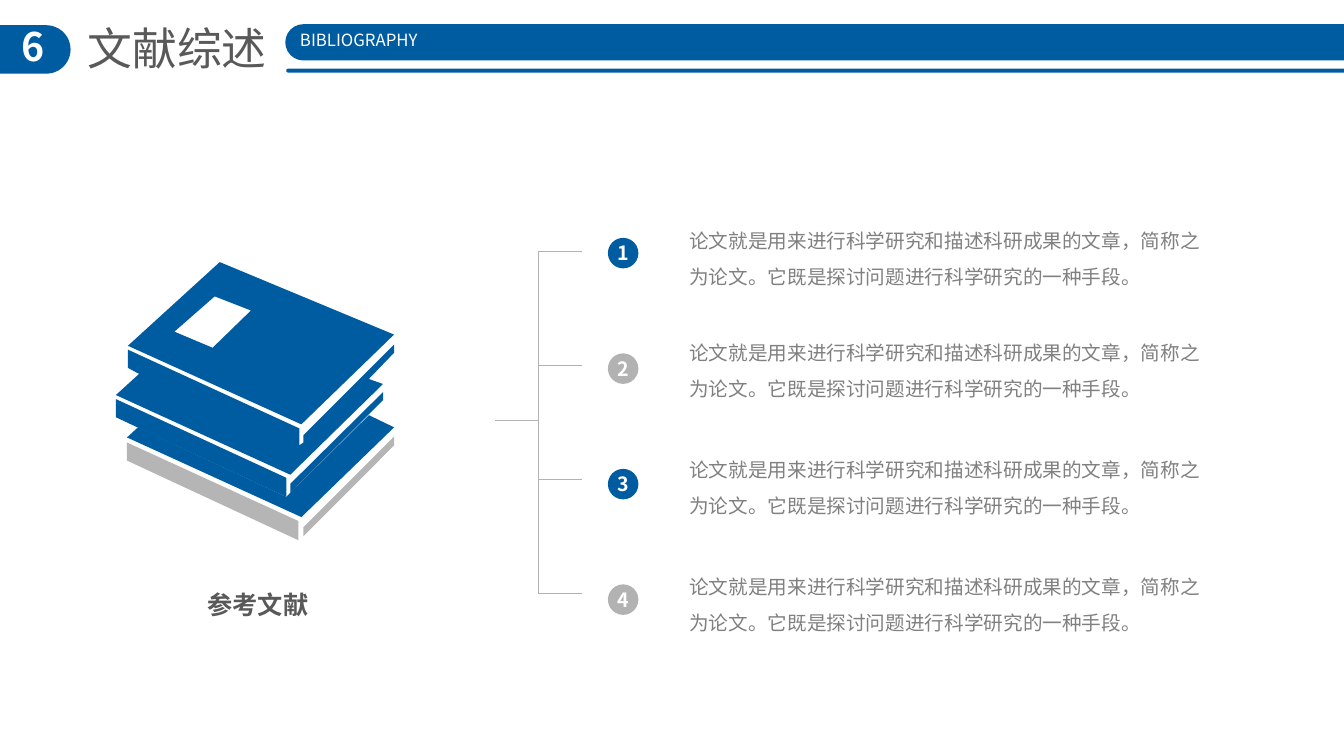
"""Build the bibliography slide with a stack of books and four numbered notes."""
import lxml.etree
import pptx
import pptx.dml.color
import pptx.enum.shapes
import pptx.enum.text
import pptx.oxml.ns
import pptx.util

Pt = pptx.util.Pt
SHAPES = pptx.enum.shapes.MSO_SHAPE
ALIGN = pptx.enum.text.PP_ALIGN

SECTION_NUMBER = "6"
TITLE = "文献综述"
SUBTITLE = "BIBLIOGRAPHY"
CAPTION = "参考文献"
NOTE = "论文就是用来进行科学研究和描述科研成果的文章，简称之为论文。它既是探讨问题进行科学研究的一种手段。"
NOTES = [
    {"number": "1", "color": "blue", "text": NOTE, "top": 151.9},
    {"number": "2", "color": "silver", "text": NOTE, "top": 231.8},
    {"number": "3", "color": "blue", "text": NOTE, "top": 315.4},
    {"number": "4", "color": "silver", "text": NOTE, "top": 398.9},
]

THEME = {
    "font": "Noto Sans CJK SC",
    "colors": {"blue": "005CA1", "silver": "B2B2B2", "page_edge": "B5B5B6",
               "white": "FFFFFF", "dark": "595959", "body": "808080"},
    "sizes": {"title": 32, "section": 28, "caption": 18, "note": 14, "subtitle": 12},
    "rule": 0.5,
}

HEADER_BARS = [(-20.2, 18, 70.6, 34.6), (203.8, 17.3, 794.2, 25.9), (204.5, 49, 794.2, 2.9)]

BOOK_PARTS = [
    ("page_edge", [[(90.7, 329), (213.1, 385.9), (213.1, 372.2), (90.7, 316.1)]]),
    ("page_edge", [[(216.7, 383), (281.5, 318.2), (281.5, 311.8), (216.7, 376.6)]]),
    ("blue", [[(82.8, 285.1), (82.8, 298.1), (204.5, 355), (204.5, 341.3)]]),
    ("blue", [[(207.4, 339.1), (273.6, 274.3), (263.5, 270.7), (281.5, 252), (281.5, 246.2),
               (216.7, 311), (216.7, 316.1), (213.8, 318.2), (213.8, 306), (91.4, 249.8),
               (91.4, 262.8), (99.4, 267.1), (82.8, 282.2)]]),
    ("blue", [[(281.5, 239), (157, 187.2), (91.4, 247), (215.3, 303.1)],
              [(151.9, 248.4), (124.6, 236.9), (153.4, 211.7), (179.3, 221.8)]]),
    ("blue", [[(207.4, 352.1), (273.6, 285.8), (273.6, 280.1), (207.4, 345.6)]]),
    ("blue", [[(263.5, 296.6), (207.4, 352.1), (204.5, 355), (98.6, 305.3), (90.7, 312.5),
               (215.3, 369.4), (281.5, 305.3)]]),
]

CIRCLE_LEFT, CIRCLE_TOP, CIRCLE_PITCH, CIRCLE_SIZE = 434.2, 169.9, 82.5, 21.8
BRANCH_TOP, BRANCH_PITCH, BRANCH_LENGTH = 179.3, 81.4, 31
TRUNK_LEFT, STEM_TOP = 384.5, 300.2


def color(name):
    return pptx.dml.color.RGBColor.from_string(THEME["colors"][name])


def paint(shape, fill):
    shape.shadow.inherit = False
    shape.fill.solid()
    shape.fill.fore_color.rgb = color(fill)
    shape.line.fill.background()


def add_filled(slide, kind, box, fill):
    shape = slide.shapes.add_shape(kind, *map(Pt, box))
    paint(shape, fill)
    return shape


def add_text(slide, text, box, size, fill, bold=False, wrap=False, margins=(7.2, 3.6),
             align=ALIGN.LEFT, spacing=None):
    frame = slide.shapes.add_textbox(*map(Pt, box)).text_frame
    horizontal, vertical = map(Pt, margins)
    frame_format = {
        "word_wrap": wrap,
        "auto_size": pptx.enum.text.MSO_AUTO_SIZE.SHAPE_TO_FIT_TEXT,
        "margin_left": horizontal, "margin_right": horizontal,
        "margin_top": vertical, "margin_bottom": vertical,
    }
    paragraph = frame.paragraphs[0]
    run = paragraph.add_run()
    run.text = text
    font_format = {"name": THEME["font"], "size": Pt(THEME["sizes"][size]), "bold": bold}
    paragraph_format = {"alignment": align, "line_spacing": spacing}
    for target, values in ((frame, frame_format), (paragraph, paragraph_format),
                           (run.font, font_format)):
        for name, value in values.items():
            setattr(target, name, value)
    run.font.color.rgb = color(fill)
    properties = run._r.get_or_add_rPr()
    east_asian = lxml.etree.SubElement(properties, pptx.oxml.ns.qn("a:ea"))
    east_asian.set("typeface", THEME["font"])


def add_rule(slide, start, end):
    connector = slide.shapes.add_connector(
        pptx.enum.shapes.MSO_CONNECTOR.STRAIGHT, *map(Pt, start + end))
    connector.line.color.rgb = color("silver")
    connector.line.width = Pt(THEME["rule"])
    lxml.etree.SubElement(connector._element.spPr, pptx.oxml.ns.qn("a:effectLst"))


def add_header(slide):
    for box in HEADER_BARS:
        add_filled(slide, SHAPES.ROUNDED_RECTANGLE, box, "blue").adjustments[0] = 0.5
    add_text(slide, SECTION_NUMBER, (5, 15.8, 36.7, 41), "section", "white",
             bold=True, wrap=True, margins=(0, 0), align=ALIGN.CENTER)
    add_text(slide, TITLE, (55.4, 11.5, 144, 46.1), "title", "dark")
    add_text(slide, SUBTITLE, (205.2, 18, 102.2, 21.6), "subtitle", "white",
             align=ALIGN.CENTER)


def add_notes(slide):
    for index, note in enumerate(NOTES):
        top = CIRCLE_TOP + index * CIRCLE_PITCH
        add_filled(slide, SHAPES.OVAL, (CIRCLE_LEFT, top, CIRCLE_SIZE, CIRCLE_SIZE),
                   note["color"])
        add_text(slide, note["text"], (485.3, note["top"], 391.7, 58.3), "note", "body",
                 wrap=True, spacing=1.5)
        add_text(slide, note["number"], (CIRCLE_LEFT - 0.4, top - 1, 23, 24.5), "note",
                 "white", bold=True)


def add_bracket(slide):
    branches = [BRANCH_TOP + index * BRANCH_PITCH for index in range(len(NOTES))]
    for top in branches:
        add_rule(slide, (TRUNK_LEFT, top), (TRUNK_LEFT + BRANCH_LENGTH, top))
    add_rule(slide, (TRUNK_LEFT, branches[0]), (TRUNK_LEFT, branches[-1]))
    add_rule(slide, (TRUNK_LEFT - BRANCH_LENGTH, STEM_TOP), (TRUNK_LEFT, STEM_TOP))


def add_books(slide):
    for fill, contours in BOOK_PARTS:
        outlines = [[(Pt(x), Pt(y)) for x, y in contour] for contour in contours]
        builder = slide.shapes.build_freeform(*outlines[0][0])
        builder.add_line_segments(outlines[0][1:], close=True)
        for outline in outlines[1:]:
            builder.move_to(*outline[0])
            builder.add_line_segments(outline[1:], close=True)
        paint(builder.convert_to_shape(), fill)
    add_text(slide, CAPTION, (141.1, 417.6, 87.1, 28.8), "caption", "dark", bold=True)


def main():
    presentation = pptx.Presentation()
    presentation.slide_width, presentation.slide_height = Pt(960), Pt(540)
    slide = presentation.slides.add_slide(presentation.slide_layouts[6])
    add_header(slide)
    add_notes(slide)
    add_bracket(slide)
    add_books(slide)
    presentation.save("out.pptx")


if __name__ == "__main__":
    main()
